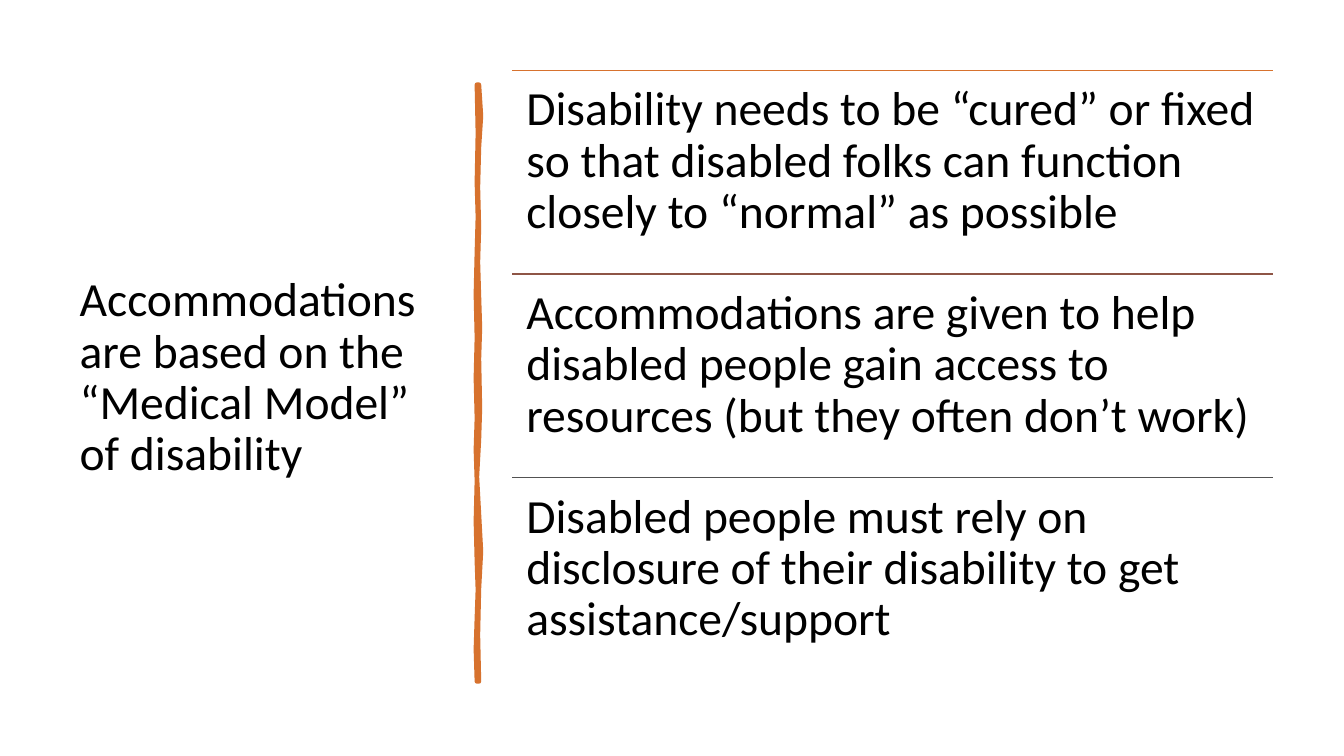
from lxml import etree
from pptx import Presentation
from pptx.dml.color import RGBColor
from pptx.enum.shapes import MSO_CONNECTOR
from pptx.enum.text import MSO_ANCHOR, MSO_AUTO_SIZE, PP_ALIGN
from pptx.oxml.ns import qn
from pptx.util import Inches, Pt

BLACK = RGBColor(0x00, 0x00, 0x00)
WHITE = RGBColor(0xFF, 0xFF, 0xFF)
ORANGE = RGBColor(0xD7, 0x72, 0x2E)
BROWN = RGBColor(0x8E, 0x55, 0x46)
GRAY = RGBColor(0x52, 0x52, 0x52)

TOP = Inches(0.7)
LIST_LEFT, LIST_WIDTH = Inches(5.08), Inches(7.55)
ROW_HEIGHT = Inches(2.02)


def set_text(tf, text):
    tf.word_wrap = True
    tf.auto_size = MSO_AUTO_SIZE.NONE
    tf.text = text
    p = tf.paragraphs[0]
    p.alignment = PP_ALIGN.LEFT
    p.line_spacing = 0.9
    p.font.name = "Calibri"
    p.font.size = Pt(34)
    p.font.color.rgb = BLACK


prs = Presentation()
prs.slide_width, prs.slide_height = Inches(13.33), Inches(7.5)
slide = prs.slides.add_slide(prs.slide_layouts[5])
slide.background.fill.solid()
slide.background.fill.fore_color.rgb = WHITE

# Title on the left
title = slide.shapes.title
title.left, title.top = Inches(0.69), TOP
title.width, title.height = Inches(3.74), Inches(6.11)
set_text(title.text_frame, "Accommodations are based on the\v“Medical Model” of disability")
title.text_frame.vertical_anchor = MSO_ANCHOR.MIDDLE

# Hand-drawn divider: (x, y) in hundredths of an inch, down the right edge and up the left
right_edge = [(475, 84), (477, 115), (475, 146), (474, 186), (475, 226), (474, 260),
              (475, 294), (476, 325), (475, 356), (476, 405), (475, 436), (473, 473),
              (475, 510), (477, 547), (475, 584), (474, 630), (475, 676)]
left_edge = [(473, 676), (472, 644), (473, 613), (474, 585), (473, 557), (472, 517),
             (473, 477), (472, 446), (473, 415), (472, 375), (473, 335), (472, 292),
             (473, 250), (474, 215), (473, 181), (474, 132), (473, 84)]
outline = right_edge + left_edge
builder = slide.shapes.build_freeform(*outline[0], scale=Inches(0.01))
builder.add_line_segments(outline[1:], close=True)
divider = builder.convert_to_shape()
divider.shadow.inherit = False
divider.fill.solid()
divider.fill.fore_color.rgb = ORANGE
divider.line.color.rgb = ORANGE
divider.line.width = Pt(3.25)

# Three statements, each under a thin rule
statements = [
    ("Disability needs to be “cured” or fixed so that disabled folks can function "
     "closely to “normal” as possible", ORANGE),
    ("Accommodations are given to help disabled people gain access to resources "
     "(but they often don’t work)", BROWN),
    ("Disabled people must rely on disclosure of their disability to get "
     "assistance/support", GRAY),
]
for row, (text, color) in enumerate(statements):
    y = TOP + row * ROW_HEIGHT
    rule = slide.shapes.add_connector(
        MSO_CONNECTOR.STRAIGHT, LIST_LEFT, y, LIST_LEFT + LIST_WIDTH, y)
    rule.line.color.rgb = color
    rule.line.width = Pt(1)
    etree.SubElement(rule._element.spPr, qn("a:effectLst"))

    box = slide.shapes.add_textbox(LIST_LEFT, y, LIST_WIDTH, ROW_HEIGHT)
    tf = box.text_frame
    set_text(tf, text)
    tf.margin_left = tf.margin_right = tf.margin_top = tf.margin_bottom = Inches(0.14)

prs.save("out.pptx")
